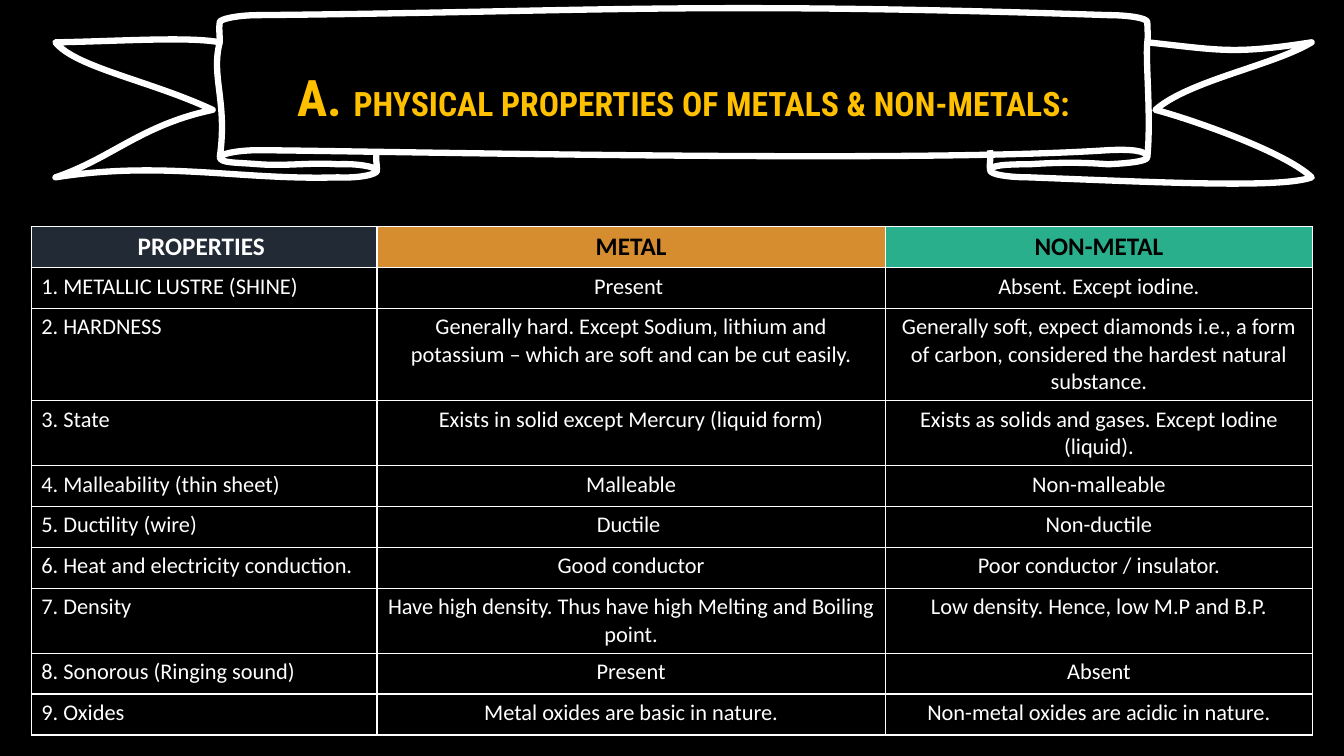
from dataclasses import dataclass

from lxml.etree import SubElement
from pptx import Presentation
from pptx.dml.color import RGBColor as Color
from pptx.enum.text import MSO_ANCHOR as Anchor, PP_ALIGN as Align
from pptx.oxml.ns import qn
from pptx.util import Inches, Pt

TITLE = ("A. ", "PHYSICAL PROPERTIES OF METALS & NON-METALS:")
ROWS = [
    ("PROPERTIES ", "METAL", "NON-METAL"),
    ("1. METALLIC LUSTRE (SHINE)", "Present ", "Absent. Except iodine."),
    ("2. HARDNESS",
     "Generally hard. Except Sodium, lithium and potassium – which are soft and can be cut easily.",
     "Generally soft, expect diamonds i.e., a form of carbon, considered the hardest natural substance."),
    ("3. State", "Exists in solid except Mercury (liquid form)",
     "Exists as solids and gases. Except Iodine (liquid)."),
    ("4. Malleability (thin sheet)", "Malleable", "Non-malleable"),
    ("5. Ductility (wire)", "Ductile ", "Non-ductile"),
    ("6. Heat and electricity conduction.", "Good conductor", "Poor conductor / insulator."),
    ("7. Density", "Have high density. Thus have high Melting and Boiling point.",
     "Low density. Hence, low M.P and B.P."),
    ("8. Sonorous (Ringing sound)", "Present", "Absent"),
    ("9. Oxides", "Metal oxides are basic in nature.", "Non-metal oxides are acidic in nature."),
]
COLUMN_WIDTHS = (3.43, 5.04, 4.24)
ROW_HEIGHT = 3.65 / 9
TABLE_HEIGHT = 5.01

# Each contour is a start point and its curves: two control points and an end point, in inches.
RIBBON = ((0.55, 1.76), [
    (1.11, 1.57, 1.4, 1.24, 2.11, 1.09),
    (1.49, 0.8, 0.75, 0.67, 0.55, 0.42),
    (1.17, 0.41, 1.87, 0.36, 2.18, 0.42),
    (2.18, 0.32, 2.17, 0.3, 2.18, 0.22),
    (2.18, 0.19, 2.35, 0.15, 2.57, 0.15),
    (5.8, 0.12, 6.81, 0.01, 10.99, 0.15),
    (11.2, 0.15, 11.38, 0.18, 11.38, 0.22),
    (11.38, 0.29, 11.39, 0.36, 11.38, 0.42),
    (12.12, 0.5, 12.23, 0.54, 13.01, 0.42),
    (12.63, 0.65, 11.79, 0.8, 11.46, 1.09),
    (11.77, 1.17, 12.74, 1.5, 13.01, 1.76),
    (12.71, 1.87, 11.5, 1.81, 10.21, 1.76),
    (10, 1.76, 9.82, 1.73, 9.82, 1.69),
    (9.82, 1.64, 9.97, 1.63, 10.21, 1.63),
    (10.51, 1.61, 10.73, 1.61, 10.99, 1.63),
    (11.2, 1.62, 11.38, 1.6, 11.38, 1.56),
    (11.38, 1.49, 11.2, 1.48, 10.99, 1.49),
    (9.04, 1.62, 3.83, 1.5, 2.57, 1.49),
    (2.35, 1.49, 2.18, 1.53, 2.18, 1.56),
    (2.19, 1.62, 2.33, 1.61, 2.57, 1.63),
    (2.83, 1.65, 3.09, 1.61, 3.35, 1.63),
    (3.56, 1.62, 3.74, 1.66, 3.74, 1.69),
    (3.75, 1.73, 3.56, 1.77, 3.35, 1.76),
    (2.39, 1.79, 1.61, 1.59, 0.55, 1.76),
])
FOLDS = [
    ((3.74, 1.49), [(3.72, 1.56, 3.74, 1.63, 3.74, 1.69)]),
    ((9.82, 1.69), [(9.81, 1.63, 9.83, 1.59, 9.82, 1.49)]),
    ((2.18, 1.56), [(2.26, 1.01, 2.09, 0.76, 2.18, 0.42)]),
    ((11.38, 0.42), [(11.36, 0.6, 11.42, 1.16, 11.38, 1.56)]),
]


@dataclass(frozen=True)
class Theme:
    black: str = "000000"
    white: str = "FFFFFF"
    gold: str = "FFC000"
    header_fills: tuple = ("222A35", "D58D30", "29AF8C")
    header_inks: tuple = ("FFFFFF", "000000", "000000")
    title_font: str = "Roboto Condensed"
    table_font: str = "Calibri"
    title_sizes: tuple = (36, 24)
    header_size: int = 18
    body_size: int = 16
    ribbon_line: float = 4.5
    grid_line: float = 1


THEME = Theme()


def bend_segments(shape, curves):
    """Turn the straight segments of a freeform into cubic curves, in order."""
    segments = list(shape._element.iter(qn("a:lnTo")))
    for segment, (x1, y1, x2, y2, *_) in zip(segments, curves):
        segment.tag = qn("a:cubicBezTo")
        end = segment[0]
        for x, y in ((x1, y1), (x2, y2)):
            control = SubElement(segment, qn("a:pt"))
            control.set("x", str(Inches(x) - shape.left))
            control.set("y", str(Inches(y) - shape.top))
        segment.append(end)


def add_ribbon(slide):
    start, curves = RIBBON
    builder = slide.shapes.build_freeform(*map(Inches, start), scale=1.0)
    builder.add_line_segments([(Inches(c[4]), Inches(c[5])) for c in curves], close=True)
    for fold_start, fold_curves in FOLDS:
        builder.move_to(*map(Inches, fold_start))
        builder.add_line_segments([(Inches(c[4]), Inches(c[5])) for c in fold_curves], close=False)
    ribbon = builder.convert_to_shape()
    bend_segments(ribbon, curves + [c for _, fold_curves in FOLDS for c in fold_curves])
    ribbon.shadow.inherit = False
    ribbon.fill.background()
    ribbon.line.color.rgb = Color.from_string(THEME.white)
    ribbon.line.width = Pt(THEME.ribbon_line)
    return ribbon


def write_title(ribbon):
    ribbon.text_frame.vertical_anchor = Anchor.MIDDLE
    ribbon.text_frame.word_wrap = True
    para = ribbon.text_frame.paragraphs[0]
    para.alignment = Align.CENTER
    para.font.name = THEME.title_font
    para.font.bold = True
    para.font.color.rgb = Color.from_string(THEME.gold)
    for words, size in zip(TITLE, THEME.title_sizes):
        span = para.add_run()
        span.text = words
        span.font.size = Pt(size)


def add_borders(cell):
    properties = cell._tc.get_or_add_tcPr()
    for side in ("a:lnL", "a:lnR", "a:lnT", "a:lnB"):
        line = SubElement(properties, qn(side), w=str(Pt(THEME.grid_line)))
        fill = SubElement(line, qn("a:solidFill"))
        SubElement(fill, qn("a:srgbClr"), val=THEME.white)


def format_cell(cell, words, row, column):
    header = row == 0
    add_borders(cell)
    if header:
        cell.fill.solid()
        cell.fill.fore_color.rgb = Color.from_string(THEME.header_fills[column])
    else:
        cell.fill.background()
    cell.text = words
    para = cell.text_frame.paragraphs[0]
    para.alignment = Align.CENTER if header or column else Align.LEFT
    para.font.name = THEME.table_font
    para.font.size = Pt(THEME.header_size if header else THEME.body_size)
    para.font.bold = header
    para.font.color.rgb = Color.from_string(THEME.header_inks[column] if header else THEME.white)


def add_properties_table(slide):
    frame = slide.shapes.add_table(len(ROWS), len(COLUMN_WIDTHS), Inches(0.31), Inches(2.25),
                                   Inches(sum(COLUMN_WIDTHS)), Inches(TABLE_HEIGHT))
    table = frame.table
    table.first_row = table.horz_banding = False
    for column, width in zip(table.columns, COLUMN_WIDTHS):
        column.width = Inches(width)
    for row_index, words_in_row in enumerate(ROWS):
        table.rows[row_index].height = Inches(ROW_HEIGHT)
        for column_index, words in enumerate(words_in_row):
            format_cell(table.cell(row_index, column_index), words, row_index, column_index)
    frame.height = Inches(TABLE_HEIGHT)


def main():
    deck = Presentation()
    deck.slide_width, deck.slide_height = Inches(13.33), Inches(7.5)
    slide = deck.slides.add_slide(deck.slide_layouts[6])
    slide.background.fill.solid()
    slide.background.fill.fore_color.rgb = Color.from_string(THEME.black)
    write_title(add_ribbon(slide))
    add_properties_table(slide)
    deck.save("out.pptx")


if __name__ == "__main__":
    main()
